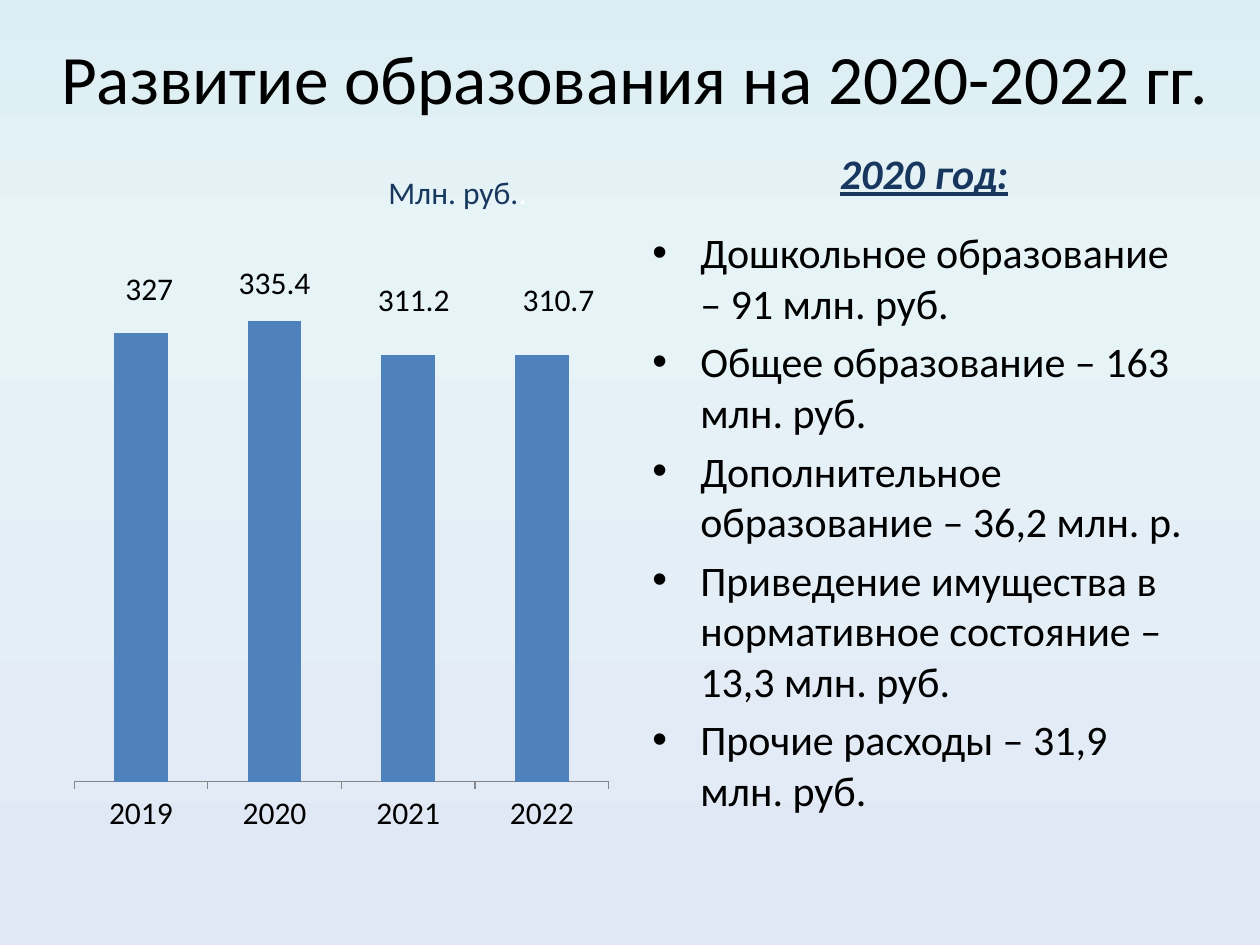
import copy

import pptx
import pptx.chart.data
import pptx.dml.color
import pptx.enum.chart
import pptx.enum.text
import pptx.oxml
import pptx.oxml.ns
import pptx.util

TITLE = "Развитие образования на 2020-2022 гг."
YEAR_HEADING = "2020 год:"
UNIT_SPANS = [("Млн. руб.", "navy"), (".", "white")]
SPENDING = [
    "Дошкольное образование – 91 млн. руб.",
    "Общее образование – 163 млн. руб.",
    "Дополнительное образование – 36,2 млн. р.",
    "Приведение имущества в нормативное состояние – 13,3 млн. руб.",
    "Прочие расходы – 31,9 млн. руб.",
]
# year, million roubles, sideways label shift (share of the chart's width)
BUDGET = [
    ("2019", 327, 0.015),
    ("2020", 335.4, 0),
    ("2021", 311.2, 0.01),
    ("2022", 310.7, 0.03),
]
LABEL_RISE = -0.43  # from the bar's centre, as a share of the chart's height
COLORS = {"black": "000000", "white": "FFFFFF", "navy": "17375E",
          "bar": "4F81BD", "axis": "868686"}
BACKGROUND = [(0, "DBEEF4"), (0.25, "E6F3F7"), (1, "E1E8F5")]
FONT = "Calibri"

WIDTH, HEIGHT = 10, 7.5
MARGIN, GUTTER = 0.5, 0.16
COLUMN = (WIDTH - 2 * MARGIN - GUTTER) / 2
TOP, BODY_HEIGHT = 1.75, 4.95
RIGHT = MARGIN + COLUMN + GUTTER
INDENT = 0.38
PLOT = {"x": 0.02, "y": 0.02, "w": 0.96, "h": 0.88}


def rgb(name):
    return pptx.dml.color.RGBColor.from_string(COLORS[name])


def inches(*lengths):
    return [pptx.util.Inches(length) for length in lengths]


def set_font(font, size, color="black"):
    font.name, font.size = FONT, pptx.util.Pt(size)
    font.color.rgb = rgb(color)


def manual_layout(inner=False, **values):
    """Return a c:layout element; inner places the plot area by its edges."""
    tags = ""
    if inner:
        tags = ('<c:layoutTarget val="inner"/>'
                '<c:xMode val="edge"/><c:yMode val="edge"/>')
    tags += "".join(f'<c:{key} val="{value}"/>' for key, value in values.items())
    return pptx.oxml.parse_xml(
        f'<c:layout {pptx.oxml.ns.nsdecls("c")}>'
        f'<c:manualLayout>{tags}</c:manualLayout></c:layout>')


def remove_children(element, tag):
    for child in element.findall(pptx.oxml.ns.qn(tag)):
        element.remove(child)


def paint_background(page):
    fill = page.background.fill
    fill.gradient()
    fill.gradient_angle = 270
    stop_list = page.background._cSld.find(".//" + pptx.oxml.ns.qn("a:gsLst"))
    stop_list.append(copy.deepcopy(stop_list[-1]))
    for stop, (position, color) in zip(fill.gradient_stops, BACKGROUND):
        stop.position = position
        stop.color.rgb = pptx.dml.color.RGBColor.from_string(color)


def add_title(page):
    title = page.shapes.title
    title.left, title.top, title.width, title.height = inches(0.25, 0.3, 9.58, 0.62)
    frame = title.text_frame
    frame.text = TITLE
    frame.auto_size = pptx.enum.text.MSO_AUTO_SIZE.NONE
    frame.vertical_anchor = pptx.enum.text.MSO_ANCHOR.MIDDLE
    para = frame.paragraphs[0]
    para.alignment = pptx.enum.text.PP_ALIGN.CENTER
    set_font(para.font, 39.6)


def add_text_frame(page, *place):
    frame = page.shapes.add_textbox(*inches(*place)).text_frame
    frame.word_wrap = True
    return frame


def add_caption(page, place, spans, size):
    frame = add_text_frame(page, *place)
    frame.vertical_anchor = pptx.enum.text.MSO_ANCHOR.MIDDLE
    para = frame.paragraphs[0]
    para.alignment = pptx.enum.text.PP_ALIGN.CENTER
    for text, color in spans:
        span = para.add_run()
        span.text = text
        set_font(span.font, size, color)
    return para


def add_bullets(page):
    frame = add_text_frame(page, RIGHT, TOP, COLUMN, BODY_HEIGHT)
    for index, text in enumerate(SPENDING):
        para = frame.add_paragraph() if index else frame.paragraphs[0]
        para.text = text
        para.space_before = pptx.util.Pt(4.8)
        set_font(para.font, 24)
        properties = para._p.get_or_add_pPr()
        indent = pptx.util.Inches(INDENT)
        properties.set("marL", str(indent))
        properties.set("indent", str(-indent))
        namespace = pptx.oxml.ns.nsdecls("a")
        bullet = pptx.oxml.parse_xml(f'<a:buChar {namespace} char="•"/>')
        properties.find(pptx.oxml.ns.qn("a:defRPr")).addprevious(bullet)
        bullet.addprevious(pptx.oxml.parse_xml(
            f'<a:buFont {namespace} typeface="Arial"/>'))


def label_bars(series):
    """Show values above the bars, without leader lines."""
    labels = series.data_labels
    labels.show_value = True
    for index, (_, _, shift) in enumerate(BUDGET):
        label = series.points[index].data_label
        label.position = pptx.enum.chart.XL_LABEL_POSITION.CENTER
        label._dLbl.find(pptx.oxml.ns.qn("c:idx")).addnext(
            manual_layout(x=shift, y=LABEL_RISE))
    remove_children(labels._element, "c:showLeaderLines")
    labels._element.append(pptx.oxml.parse_xml(
        f'<c:showLeaderLines {pptx.oxml.ns.nsdecls("c")} val="0"/>'))


def add_budget_chart(page):
    data = pptx.chart.data.CategoryChartData()
    data.categories = [year for year, _, _ in BUDGET]
    data.add_series("Series 1", [value for _, value, _ in BUDGET])
    chart = page.shapes.add_chart(
        pptx.enum.chart.XL_CHART_TYPE.COLUMN_STACKED,
        *inches(MARGIN, TOP, COLUMN, BODY_HEIGHT), data).chart
    chart.has_legend = chart.has_title = False
    set_font(chart.font, 18)

    values = chart.value_axis
    values.minimum_scale, values.maximum_scale = 0, 400
    values.has_major_gridlines = values.visible = False
    years = chart.category_axis
    years.major_tick_mark = pptx.enum.chart.XL_TICK_MARK.OUTSIDE
    years.format.line.color.rgb = rgb("axis")

    plot = chart.plots[0]
    plot.gap_width, plot.overlap, plot.vary_by_categories = 150, 100, False
    series = plot.series[0]
    series.format.fill.solid()
    series.format.fill.fore_color.rgb = rgb("bar")
    label_bars(series)

    area = chart._chartSpace.find(".//" + pptx.oxml.ns.qn("c:plotArea"))
    remove_children(area, "c:layout")
    area.insert(0, manual_layout(inner=True, **PLOT))


def main():
    deck = pptx.Presentation()
    deck.slide_width, deck.slide_height = inches(WIDTH, HEIGHT)
    page = deck.slides.add_slide(deck.slide_layouts[5])
    paint_background(page)
    add_title(page)
    add_budget_chart(page)
    add_bullets(page)
    heading = add_caption(page, (6.5, 1.08, 1.67, 0.58), [(YEAR_HEADING, "navy")], 24)
    for span in heading.runs:
        span.font.bold = span.font.italic = span.font.underline = True
    add_caption(page, (2.92, 1.38, 1.42, 0.29), UNIT_SPANS, 18)
    deck.save("out.pptx")


if __name__ == "__main__":
    main()
